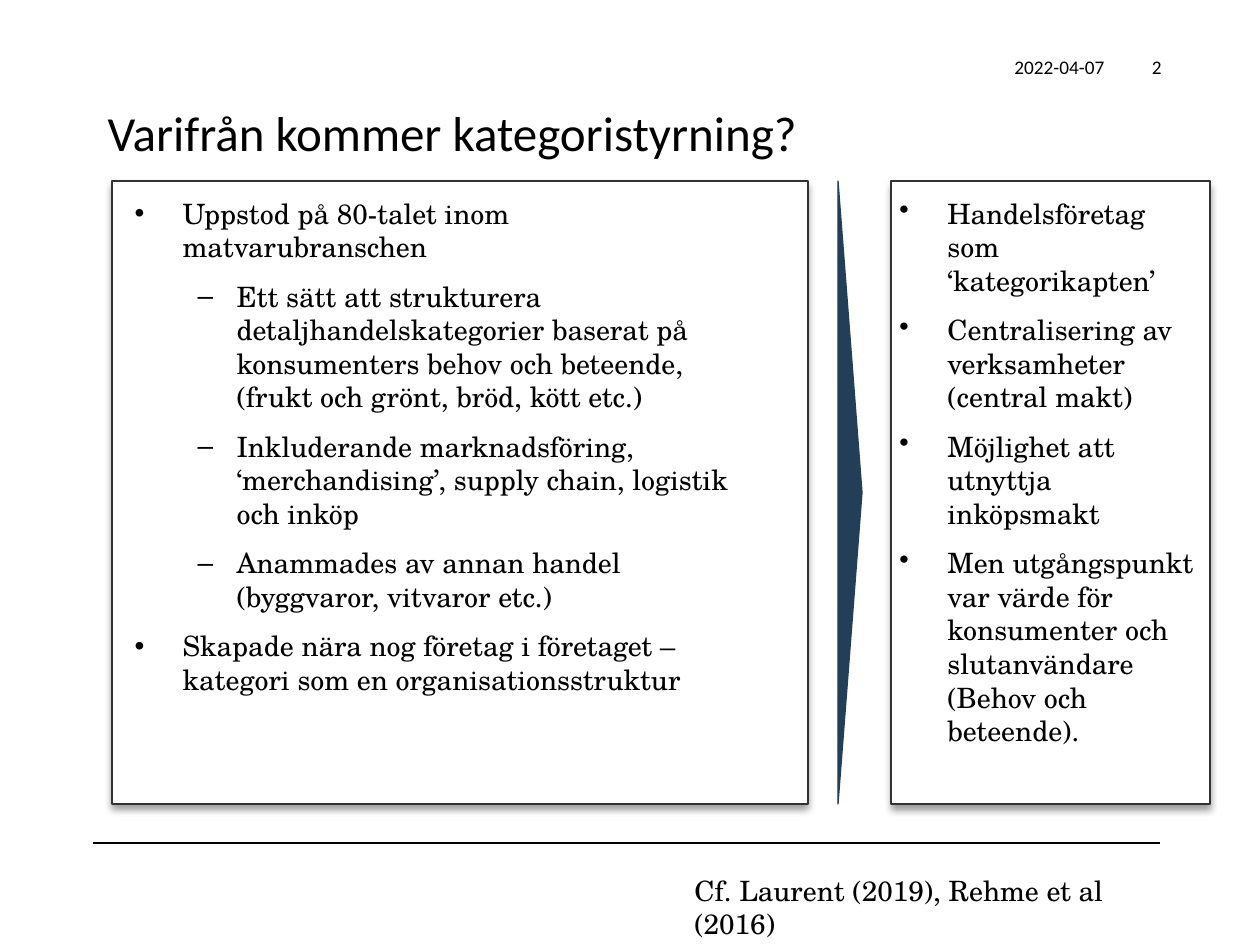
from lxml import etree
from pptx import Presentation
from pptx.dml.color import RGBColor
from pptx.enum.shapes import MSO_CONNECTOR, MSO_SHAPE
from pptx.enum.text import MSO_ANCHOR, MSO_AUTO_SIZE, PP_ALIGN
from pptx.oxml import parse_xml
from pptx.oxml.ns import nsdecls, qn
from pptx.util import Emu, Pt

RECTANGLE = MSO_SHAPE.RECTANGLE
TRIANGLE = MSO_SHAPE.ISOSCELES_TRIANGLE
STRAIGHT = MSO_CONNECTOR.STRAIGHT
TOP = MSO_ANCHOR.TOP
NO_AUTOFIT = MSO_AUTO_SIZE.NONE
LEFT, RIGHT = PP_ALIGN.LEFT, PP_ALIGN.RIGHT

SCALE = 914400 / 126
BLACK, WHITE, BORDER, NAVY = "000000", "FFFFFF", "323232", "233E57"
SANS, SERIF = "Calibri", "TeX Gyre Schola"
BULLETS = [("•", 48, 48), ("–", 102, 39)]

ORIGINS = [
    (0, "Uppstod på 80-talet inom matvarubranschen"),
    (1, "Ett sätt att strukturera detaljhandelskategorier baserat på "
        "konsumenters behov och beteende, (frukt och grönt, bröd, kött etc.)"),
    (1, "Inkluderande marknadsföring, ‘merchandising’, supply chain, logistik och inköp"),
    (1, "Anammades av annan handel (byggvaror, vitvaror etc.)"),
    (0, "Skapade nära nog företag i företaget – kategori som en organisationsstruktur"),
]
EFFECTS = [
    (0, "Handelsföretag som ‘kategorikapten’"),
    (0, "Centralisering av verksamheter (central makt)"),
    (0, "Möjlighet att utnyttja inköpsmakt"),
    (0, "Men utgångspunkt var värde för konsumenter och slutanvändare (Behov och beteende)."),
]


def px(length):
    """Turn a length in px into EMU."""
    return Emu(round(length * SCALE))


def color(value):
    """Turn a hex string into a colour."""
    return RGBColor.from_string(value)


def place(shape, box):
    """Move and size a shape to a box in px."""
    shape.left, shape.top, shape.width, shape.height = map(px, box)


def style_paragraph(paragraph, font, size, align=LEFT):
    """Set the font and alignment of a paragraph."""
    paragraph.alignment = align
    paragraph.font.name = font
    paragraph.font.size = Pt(size)
    paragraph.font.color.rgb = color(BLACK)


def prepare_frame(frame):
    """Make a text frame wrap, start at the top and keep its size."""
    frame.word_wrap = True
    frame.auto_size = NO_AUTOFIT
    frame.vertical_anchor = TOP


def add_text(slide, box, text, font, size, align=LEFT):
    """Add a text box with one paragraph."""
    frame = slide.shapes.add_textbox(*map(px, box)).text_frame
    prepare_frame(frame)
    frame.text = text
    style_paragraph(frame.paragraphs[0], font, size, align)


def add_filled(slide, preset, box, fill, line):
    """Add a preset shape with a plain fill and a thin outline."""
    shape = slide.shapes.add_shape(preset, *map(px, box))
    shape.shadow.inherit = False
    shape.fill.solid()
    shape.fill.fore_color.rgb = color(fill)
    shape.line.color.rgb = color(line)
    shape.line.width = Pt(0.75)
    return shape


def fill_list(shape, items):
    """Write bulleted paragraphs into a shape."""
    frame = shape.text_frame
    prepare_frame(frame)
    for index, (level, text) in enumerate(items):
        paragraph = frame.add_paragraph() if index else frame.paragraphs[0]
        paragraph.text = text
        paragraph.level = level
        paragraph.space_before = Pt(9)
        style_paragraph(paragraph, SERIF, 16)
        character, margin, hanging = BULLETS[level]
        properties = paragraph._p.get_or_add_pPr()
        properties.set("marL", str(px(margin)))
        properties.set("indent", str(-px(hanging)))
        etree.SubElement(properties, qn("a:buChar")).set("char", character)


def build_panel(slide, box, text_shape, text_box, items):
    """Draw a shadowed panel with a list whose box is relative to it."""
    panel = add_filled(slide, RECTANGLE, box, WHITE, BORDER)
    effects = panel._element.spPr.find(qn("a:effectLst"))
    effects.append(parse_xml(
        f'<a:outerShdw {nsdecls("a")} blurRad="{Pt(4)}" dist="{Pt(3)}" dir="5400000" '
        f'rotWithShape="0"><a:srgbClr val="{BLACK}"><a:alpha val="40000"/></a:srgbClr>'
        '</a:outerShdw>'))
    left, top, width, height = text_box
    place(text_shape, (box[0] + left, box[1] + top, width, height))
    panel._element.addnext(text_shape._element)
    fill_list(text_shape, items)


def build_arrow(slide, box):
    """Fill a tall box with a triangle that points right."""
    left, top, width, height = box
    turned = (left + (width - height) / 2, top + (height - width) / 2, height, width)
    add_filled(slide, TRIANGLE, turned, NAVY, NAVY).rotation = 90


def build_header(slide, box):
    """Place the title, date and slide number in the header."""
    left, top, width, height = box
    title = slide.shapes.title
    place(title, (left, top + 47, width, height - 47))
    title.text = "Varifrån kommer kategoristyrning?"
    prepare_frame(title.text_frame)
    style_paragraph(title.text_frame.paragraphs[0], SANS, 28)
    add_text(slide, (left + 824, top, 198, 37), "2022-04-07", SANS, 11, RIGHT)
    add_text(slide, (left + 1002, top, 77, 37), "2", SANS, 11, RIGHT)


def build_footer(slide, box):
    """Draw the footer rule with the reference below it."""
    left, top, width, height = box
    rule = slide.shapes.add_connector(
        STRAIGHT, px(left), px(top), px(left + width), px(top))
    rule.line.color.rgb = color(BLACK)
    rule.line.width = Pt(0.75)
    etree.SubElement(rule._element.spPr, qn("a:effectLst"))
    add_text(slide, (left + 589, top + 24, 509, height - 24),
             "Cf. Laurent (2019), Rehme et al (2016)", SERIF, 16)


def main():
    """Build and save the slide."""
    presentation = Presentation()
    presentation.slide_width, presentation.slide_height = px(1260), px(945)
    slide = presentation.slides.add_slide(presentation.slide_layouts[1])
    build_header(slide, (95, 49, 1066, 162))
    build_panel(slide, (112, 181, 696, 623), slide.placeholders[1],
                (10, 9, 630, 309), ORIGINS)
    build_panel(slide, (891, 181, 319, 623), slide.shapes.add_textbox(0, 0, 0, 0),
                (-4, 9, 319, 251), EFFECTS)
    build_arrow(slide, (838, 181, 24, 623))
    build_footer(slide, (93, 843, 1067, 71))
    presentation.save("out.pptx")


if __name__ == "__main__":
    main()
